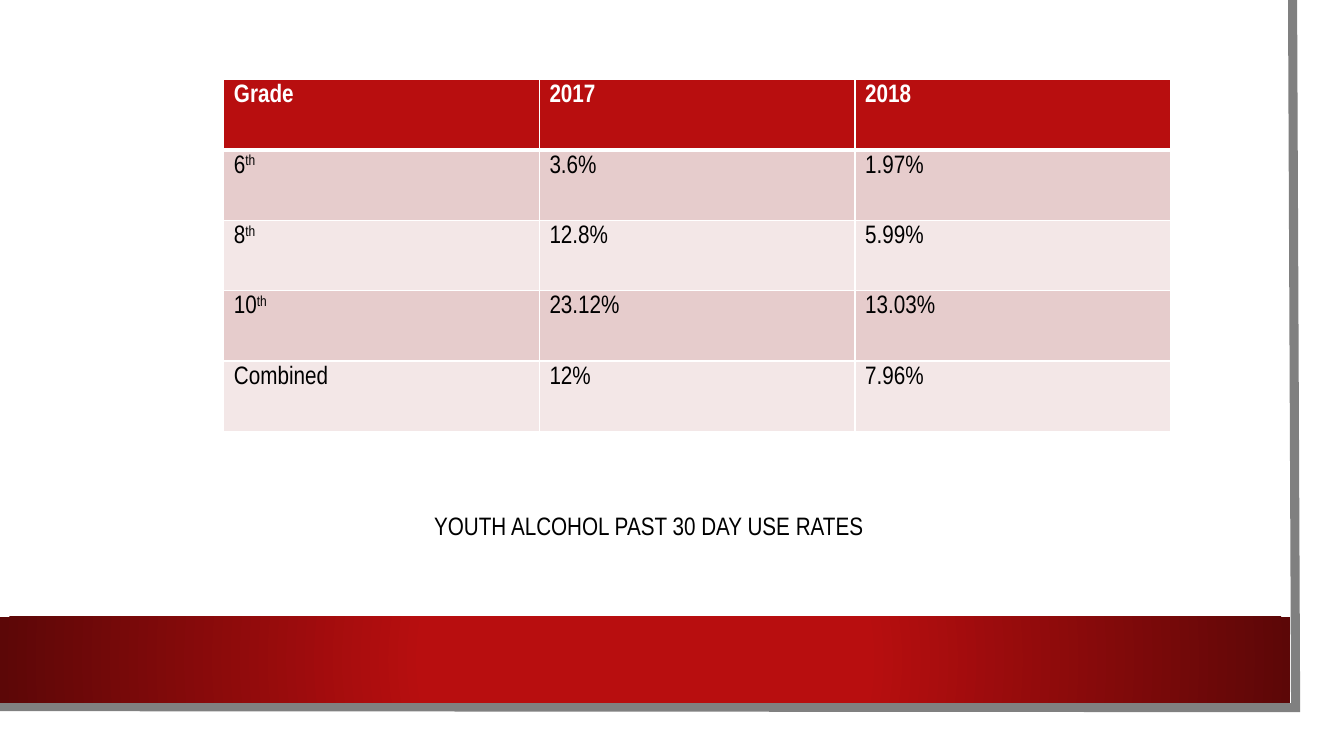
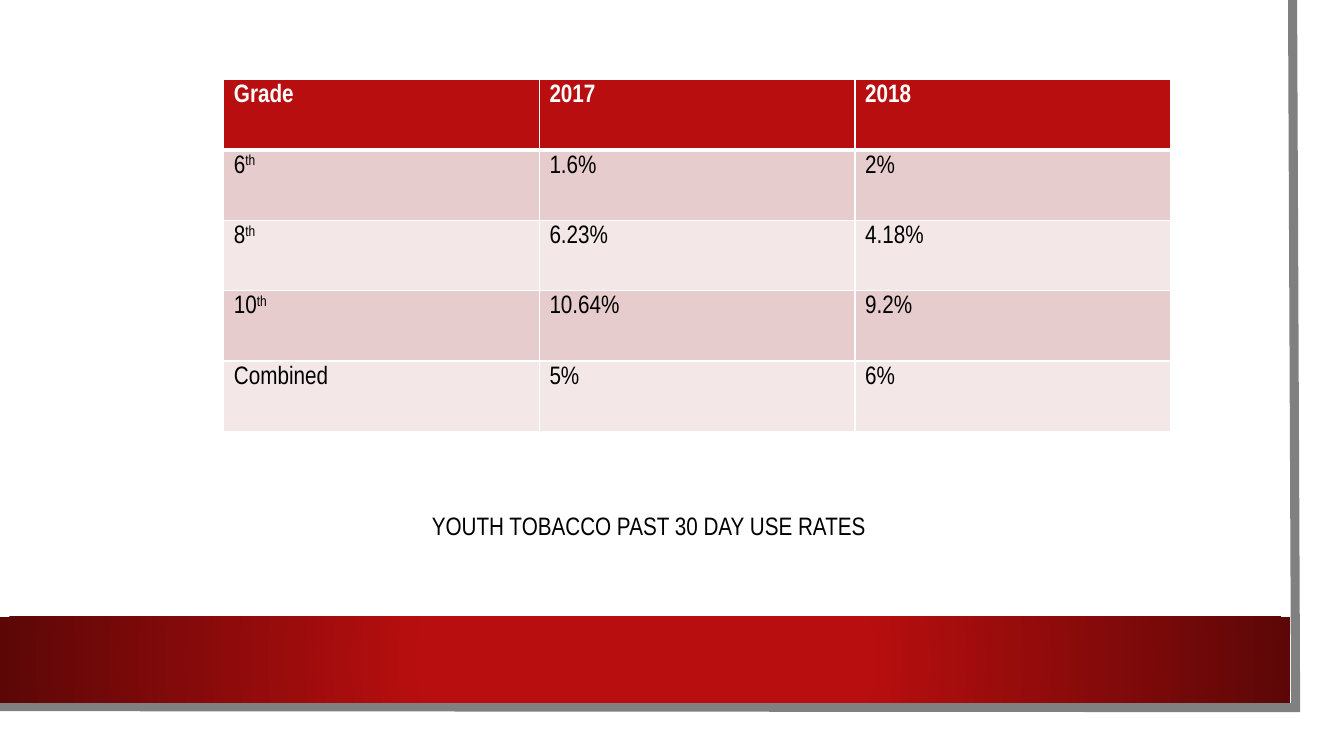
from dataclasses import dataclass

from lxml import etree
from pptx import Presentation
from pptx import util as u
from pptx.dml.color import RGBColor
from pptx.enum import shapes, text
from pptx.oxml import ns

COLORS = {
    "white": "FFFFFF", "black": "000000", "edge": "808080",
    "red": "B80E0F", "dark_red": "5C0707",
    "odd_row": "E6CCCC", "even_row": "F3E7E7",
}
FONT = {"name": "Arial Narrow", "size": u.Pt(18)}
HEADER = ("Grade", "2017", "2018")
GRADES = (("6", "th"), ("8", "th"), ("10", "th"), ("Combined", ""))


@dataclass(frozen=True)
class RateSlide:
    caption: str
    rates: tuple[tuple[str, str], ...]  # (2017, 2018) for each grade


RATE_SLIDES = (
    RateSlide("YOUTH ALCOHOL PAST 30 DAY USE RATES",
              (("3.6%", "1.97%"), ("12.8%", "5.99%"),
               ("23.12%", "13.03%"), ("12%", "7.96%"))),
    RateSlide("YOUTH TOBACCO PAST 30 DAY USE RATES",
              (("1.6%", "2%"), ("6.23%", "4.18%"),
               ("10.64%", "9.2%"), ("5%", "6%"))),
)


def rgb(color: str) -> RGBColor:
    return RGBColor.from_string(COLORS[color])


def sub(parent, tag: str, **attributes: str):
    return etree.SubElement(parent, ns.qn(tag), attributes)


def add_run(paragraph, words: str, color: str, bold: bool = False,
            superscript: bool = False) -> None:
    run = paragraph.add_run()
    run.text = words
    for key, value in {**FONT, "bold": bold}.items():
        setattr(run.font, key, value)
    run.font.color.rgb = rgb(color)
    if superscript:
        run.font._element.set("baseline", "30000")


def add_rectangle(slide, left: float, top: float, width: float, height: float):
    rectangle = slide.shapes.add_shape(
        shapes.MSO_SHAPE.RECTANGLE, *map(u.Inches, (left, top, width, height)))
    rectangle.shadow.inherit = False
    rectangle.line.fill.background()
    return rectangle


def add_frame(slide) -> None:
    # White page
    page = add_rectangle(slide, 0, 0, 13.1, 7.27)
    page.fill.solid()
    page.fill.fore_color.rgb = rgb("white")

    # Grey edge along the right and bottom
    start, *corners = [(u.Inches(x), u.Inches(y)) for x, y in
                       ((12.82, 0), (12.85, 7.02), (-0.03, 7.01))]
    outline = slide.shapes.build_freeform(*start)
    outline.add_line_segments(corners, close=False)
    edge = outline.convert_to_shape()
    edge.shadow.inherit = False
    edge.fill.background()
    edge.line.color.rgb = rgb("edge")
    edge.line.width = u.Pt(6.5)
    sub(edge.line._get_or_add_ln(), "a:miter", lim="800000")

    # Red band, darker towards its ends
    band = add_rectangle(slide, 0, 6.12, 12.8, 0.85)
    band.fill.gradient()
    gradient = band._element.spPr.find(ns.qn("a:gradFill"))
    for part in list(gradient):
        gradient.remove(part)
    stops = sub(gradient, "a:gsLst")
    for position, color in ((34, "red"), (100, "dark_red")):
        stop = sub(stops, "a:gs", pos=str(position * 1000))
        sub(stop, "a:srgbClr", val=COLORS[color])
    center = sub(gradient, "a:path", path="circle")
    sub(center, "a:fillToRect", l="50000", t="50000", r="50000", b="50000")


def add_caption(slide, caption: str) -> None:
    box = slide.shapes.add_textbox(*map(u.Inches, (0.75, 4.49, 11.37, 1.39)))
    frame = box.text_frame
    frame.word_wrap = True
    frame.vertical_anchor = text.MSO_ANCHOR.MIDDLE
    paragraph = frame.paragraphs[0]
    paragraph.alignment = text.PP_ALIGN.CENTER
    paragraph.line_spacing = 1.2
    add_run(paragraph, caption, "black")


def style_cell(cell, row: int) -> None:
    # Borders come before the fill in the cell properties
    widths = {"L": 1, "R": 1, "T": 3 if row == 1 else 1, "B": 3 if row == 0 else 1}
    properties = cell._tc.get_or_add_tcPr()
    for side, width in widths.items():
        border = sub(properties, f"a:ln{side}", w=str(u.Pt(width)))
        sub(sub(border, "a:solidFill"), "a:srgbClr", val=COLORS["white"])
    cell.fill.solid()
    banding = "odd_row" if row % 2 else "even_row"
    cell.fill.fore_color.rgb = rgb(banding if row else "red")


def add_rate_table(slide, rates: tuple[tuple[str, str], ...]) -> None:
    rows = [[(label, "") for label in HEADER]]
    rows += [[grade, *((rate, "") for rate in pair)]
             for grade, pair in zip(GRADES, rates)]
    table = slide.shapes.add_table(
        len(rows), len(HEADER), *map(u.Inches, (2.22, 0.79, 9.39, 3.49))).table
    for r, row in enumerate(rows):
        for c, (words, suffix) in enumerate(row):
            cell = table.cell(r, c)
            style_cell(cell, r)
            paragraph = cell.text_frame.paragraphs[0]
            add_run(paragraph, words, "black" if r else "white", bold=r == 0)
            if suffix:
                add_run(paragraph, suffix, "black", superscript=True)


def main() -> None:
    deck = Presentation()
    deck.slide_width, deck.slide_height = u.Inches(13.33), u.Inches(7.5)
    for content in RATE_SLIDES:
        slide = deck.slides.add_slide(deck.slide_layouts[6])
        add_frame(slide)
        add_caption(slide, content.caption)
        add_rate_table(slide, content.rates)
    deck.save("out.pptx")


if __name__ == "__main__":
    main()
